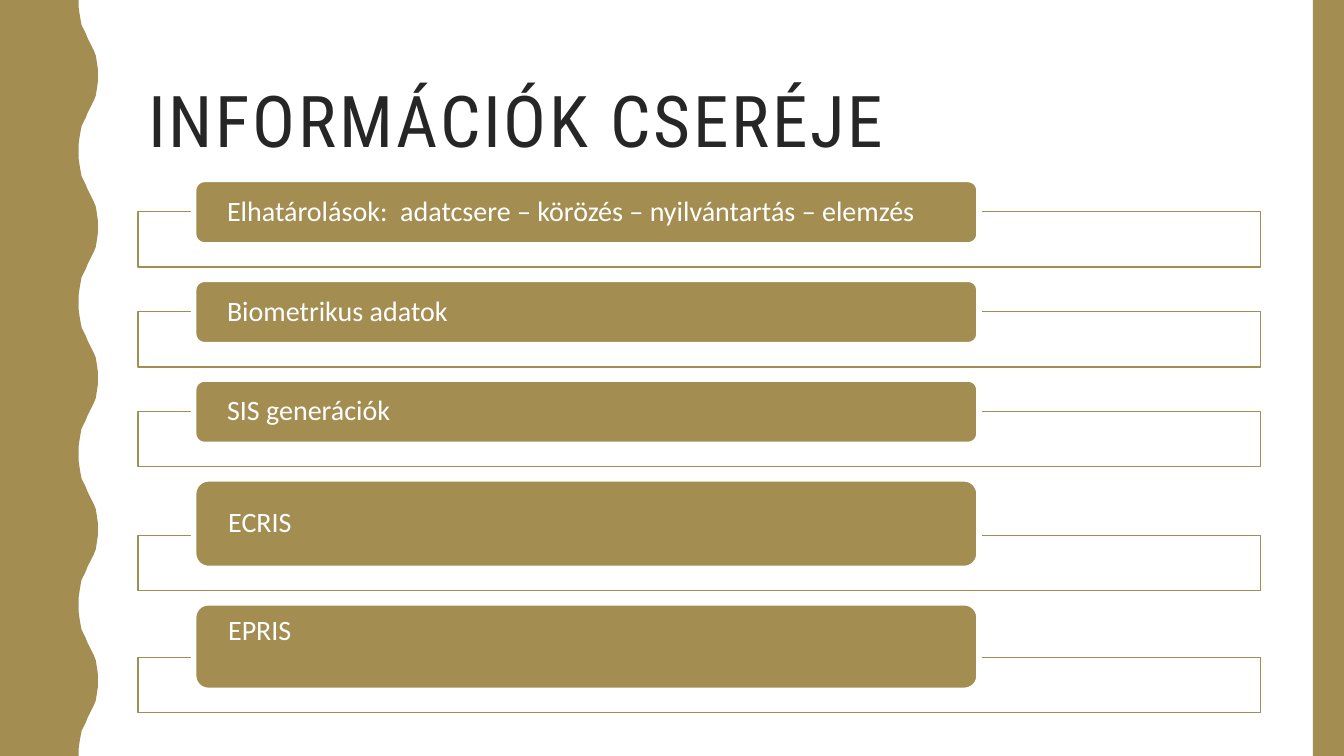
"""Builds a slide on information exchange: a wavy edge and five labelled bars."""
from lxml.etree import SubElement
from pptx import Presentation
from pptx.dml.color import RGBColor
from pptx.enum.shapes import MSO_SHAPE as Kind
from pptx.enum.text import MSO_ANCHOR as Anchor, MSO_AUTO_SIZE as Auto, PP_ALIGN as Align
from pptx.oxml.ns import qn
from pptx.util import Pt

PX = 9144
GOLD, WHITE, DARK = "A38D51", "FFFFFF", "262626"


def paint(shape, fill, line=None, width=1):
    """Give a shape its fill and line, without a shadow."""
    shape.shadow.inherit = False
    shape.fill.solid()
    shape.fill.fore_color.rgb = RGBColor.from_string(fill)
    if line:
        shape.line.color.rgb = RGBColor.from_string(line)
        shape.line.width = Pt(width)
    else:
        shape.line.fill.background()


def write(frame, text, font, size, color):
    """Put one left-aligned, vertically centred line into a text frame."""
    frame.word_wrap = True
    frame.auto_size = Auto.NONE
    frame.vertical_anchor = Anchor.MIDDLE
    para = frame.paragraphs[0]
    para.alignment = Align.LEFT
    para.line_spacing = 0.9
    run = para.add_run()
    run.text = text
    run.font.name = font
    run.font.size = Pt(size)
    run.font.color.rgb = RGBColor.from_string(color)
    return run


deck = Presentation()
deck.slide_width, deck.slide_height = 1333 * PX, 750 * PX
slide = deck.slides.add_slide(deck.slide_layouts[5])
shapes = slide.shapes

title = shapes.title
title.left, title.top, title.width, title.height = 137 * PX, 42 * PX, 1113 * PX, 163 * PX
run = write(title.text_frame, "INFORMÁCIÓK CSERÉJE", "Roboto Condensed", 51, DARK)
run.font._element.set("spc", "200")

half = [(78, 0), (78, 7), (79, 14), (80, 20), (81, 25), (83, 29), (85, 33), (87, 38),
        (89, 42), (91, 46), (93, 50), (95, 55), (96, 61), (97, 68), (97, 75)]
wave = half + [(x, 150 - y) for x, y in half[-2:0:-1]]
edge = [(x, y + 150 * turn) for turn in range(5) for x, y in wave]
pen = shapes.build_freeform(0, 0, scale=PX)
pen.add_line_segments(edge + [(78, 750), (0, 750)], close=True)
paint(pen.convert_to_shape(), GOLD)

strip = shapes.add_shape(Kind.RECTANGLE, 1302 * PX, 0, 31 * PX, 750 * PX)
paint(strip, GOLD)

topics = [
    ("Elhatárolások:  adatcsere – körözés – nyilvántartás – elemzés", 65, 0),
    ("Biometrikus adatok", 65, 0),
    ("SIS generációk", 65, 0),
    ("ECRIS", 89, 0),
    ("EPRIS", 87, 30),
]
top = 178
for text, high, lift in topics:
    low = top + high - 33
    frame = shapes.add_shape(Kind.RECTANGLE, 137 * PX, low * PX, 1113 * PX, 55 * PX)
    paint(frame, WHITE, GOLD)
    tint = frame.fill._xPr.find(qn("a:solidFill"))[0]
    SubElement(tint, qn("a:alpha"), val="90000")

    bar = shapes.add_shape(Kind.ROUNDED_RECTANGLE, 192 * PX, top * PX, 779 * PX, high * PX)
    paint(bar, GOLD, WHITE, 4)
    body = bar.text_frame
    body.margin_left = body.margin_right = 30 * PX
    body.margin_top, body.margin_bottom = 0, lift * PX
    write(body, text, "Calibri", 20, WHITE)
    top = low + 55 + 12

deck.save("out.pptx")
